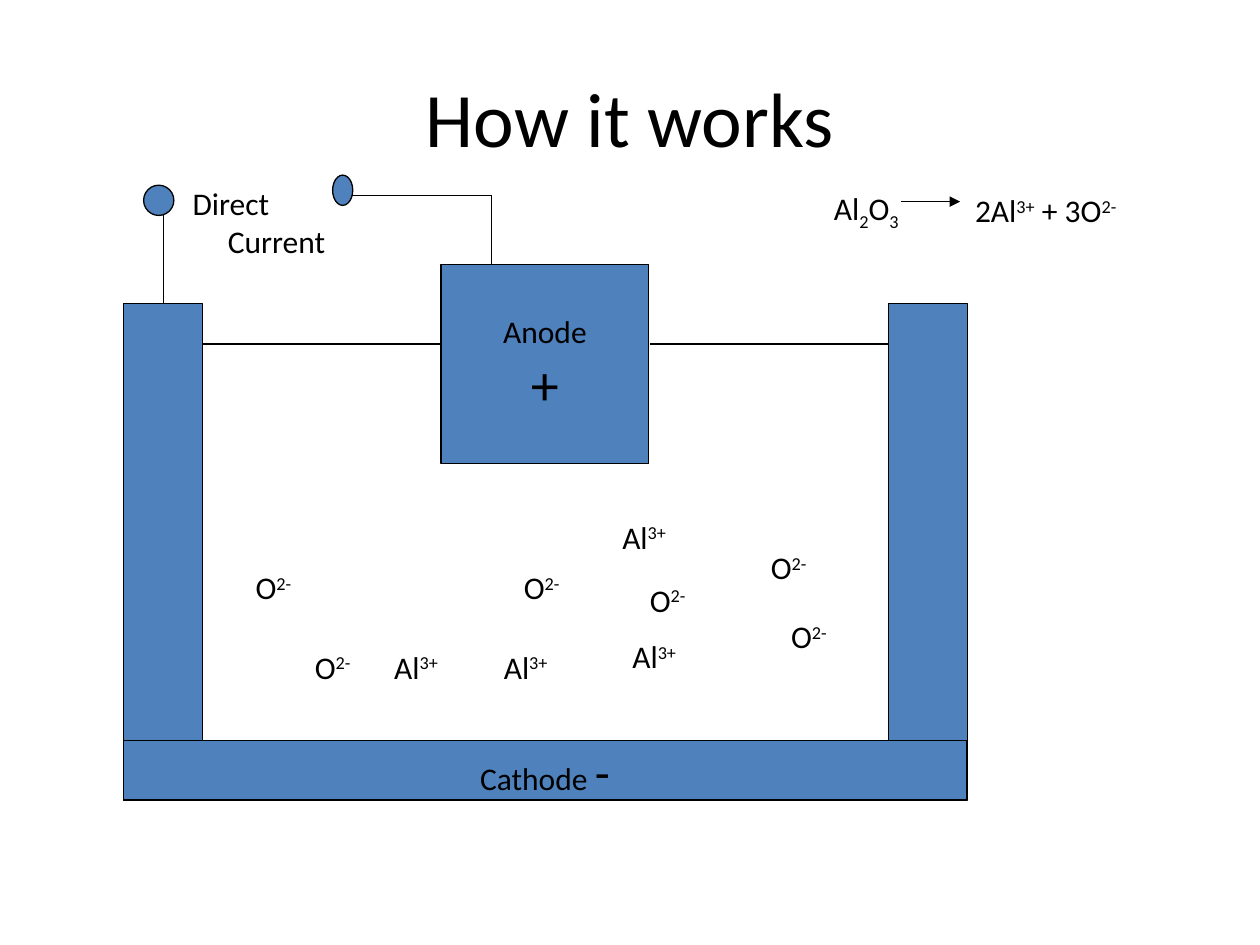
"""Build a slide that shows how an electrolysis cell splits aluminium oxide."""
from dataclasses import dataclass
from typing import Optional

import pptx
import pptx.dml.color
import pptx.enum.shapes
import pptx.enum.text
import pptx.oxml.ns
import pptx.util
from lxml import etree

Inches = pptx.util.Inches
Kind = pptx.enum.shapes.MSO_SHAPE
Align = pptx.enum.text.PP_ALIGN
Anchor = pptx.enum.text.MSO_ANCHOR
Fit = pptx.enum.text.MSO_AUTO_SIZE


@dataclass(frozen=True)
class Theme:
    font: str = "Calibri"
    ink: str = "000000"
    fill: str = "4F81BD"
    line: float = 0.75
    title: int = 44
    plus: int = 32
    minus: int = 28
    body: int = 18


THEME = Theme()


@dataclass(frozen=True)
class Run:
    text: str
    size: int = THEME.body
    base: int = 0


@dataclass(frozen=True)
class Para:
    runs: tuple[Run, ...]
    indent: float = 0


@dataclass(frozen=True)
class Box:
    left: float
    top: float
    width: float
    height: float


@dataclass(frozen=True)
class Part:
    box: Box
    kind: Kind = Kind.RECTANGLE
    paras: tuple[Para, ...] = ()


@dataclass(frozen=True)
class Wire:
    start: tuple[float, float]
    end: tuple[float, float]
    arrow: bool = False


@dataclass(frozen=True)
class Label:
    box: Box
    paras: tuple[Para, ...]
    wrap: bool = False


def sup(text: str) -> Run:
    """Return a raised run."""
    return Run(text, base=30000)


def sub(text: str) -> Run:
    """Return a lowered run."""
    return Run(text, base=-25000)


def color(code: str) -> pptx.dml.color.RGBColor:
    """Turn a hex code into a colour."""
    return pptx.dml.color.RGBColor.from_string(code)


def place(box: Box) -> tuple[int, ...]:
    """Turn a box into lengths."""
    return tuple(Inches(n) for n in (box.left, box.top, box.width, box.height))


def write(frame, paras: tuple[Para, ...], align: Align) -> None:
    """Fill a text frame run by run."""
    for i, para in enumerate(paras):
        line = frame.paragraphs[0] if i == 0 else frame.add_paragraph()
        line.alignment = align
        if para.indent:
            line._p.get_or_add_pPr().set("marL", str(Inches(para.indent)))
        for item in para.runs:
            run = line.add_run()
            run.text = item.text
            run.font.name = THEME.font
            run.font.size = pptx.util.Pt(item.size)
            run.font.color.rgb = color(THEME.ink)
            if item.base:
                run._r.get_or_add_rPr().set("baseline", str(item.base))


def stroke(line) -> None:
    """Give a line the theme's ink and weight."""
    line.color.rgb = color(THEME.ink)
    line.width = pptx.util.Pt(THEME.line)


def draw_part(slide, part: Part) -> None:
    """Draw a filled part of the cell."""
    shape = slide.shapes.add_shape(part.kind, *place(part.box))
    shape.shadow.inherit = False
    shape.fill.solid()
    shape.fill.fore_color.rgb = color(THEME.fill)
    stroke(shape.line)
    frame = shape.text_frame
    frame.word_wrap = False
    frame.vertical_anchor = Anchor.MIDDLE
    write(frame, part.paras, Align.CENTER)


def draw_wire(slide, wire: Wire) -> None:
    """Draw a straight line, with an arrowhead if asked."""
    ends = (Inches(n) for n in wire.start + wire.end)
    link = slide.shapes.add_connector(
        pptx.enum.shapes.MSO_CONNECTOR.STRAIGHT, *ends)
    stroke(link.line)
    qn = pptx.oxml.ns.qn
    if wire.arrow:
        etree.SubElement(link.line._get_or_add_ln(), qn("a:tailEnd"), type="triangle")
    etree.SubElement(link._element.spPr, qn("a:effectLst"))


def draw_label(slide, label: Label) -> None:
    """Draw a left-aligned text label."""
    frame = slide.shapes.add_textbox(*place(label.box)).text_frame
    frame.word_wrap = label.wrap
    frame.auto_size = Fit.SHAPE_TO_FIT_TEXT
    write(frame, label.paras, Align.LEFT)


def draw_title(slide, text: str) -> None:
    """Draw the centred title."""
    frame = slide.shapes.add_textbox(*place(Box(0.5, 0.3, 9, 1.25))).text_frame
    frame.word_wrap = True
    frame.vertical_anchor = Anchor.MIDDLE
    write(frame, (Para((Run(text, THEME.title),)),), Align.CENTER)


ANODE = (Para((Run("Anode"),)), Para((Run("+", THEME.plus),)))
CATHODE = (Para((Run("Cathode "), Run("-", THEME.minus))),)
PARTS = (
    Part(Box(3.5, 2.1, 1.65, 1.58), paras=ANODE),
    Part(Box(7.05, 2.41, 0.63, 3.94)),
    Part(Box(0.98, 2.41, 0.63, 3.94)),
    Part(Box(0.98, 5.88, 6.69, 0.47), paras=CATHODE),
)
ENDS = (
    Part(Box(1.14, 1.47, 0.24, 0.24), Kind.OVAL),
    Part(Box(2.64, 1.39, 0.16, 0.24), Kind.OVAL),
)
WIRES = (
    Wire((3.9, 2.1), (3.9, 1.55)),
    Wire((3.9, 1.55), (2.72, 1.55)),
    Wire((1.3, 2.41), (1.3, 1.55)),
    Wire((1.61, 2.73), (3.5, 2.73)),
    Wire((5.16, 2.73), (7.05, 2.73)),
    Wire((7.15, 1.6), (7.62, 1.6), arrow=True),
)
OXIDE = (Para((Run("Al"), sub("2"), Run("O"), sub("3"))),)
SPLIT = (Para((Run("2Al"), sup("3+"), Run(" + 3O"), sup("2-"))),)
POWER = (Para((Run("Direct"),)), Para((Run("Current"),), indent=0.28))
LABELS = (
    Label(Box(6.52, 1.45, 0.8, 0.4), OXIDE),
    Label(Box(7.64, 1.47, 1.37, 0.4), SPLIT),
    Label(Box(1.43, 1.41, 1.38, 0.7), POWER, wrap=True),
)
METAL = ((3.03, 5.09), (3.9, 5.09), (4.84, 4.06), (4.92, 5.01))
OXYGEN = ((5.06, 4.56), (2.4, 5.09), (6.18, 4.85),
          (4.06, 4.46), (6.02, 4.3), (1.93, 4.46))
IONS = (("Al", "3+", 0.61, METAL), ("O", "2-", 0.54, OXYGEN))


def main() -> None:
    """Build and save the slide."""
    deck = pptx.Presentation()
    deck.slide_width, deck.slide_height = Inches(10), Inches(7.5)
    slide = deck.slides.add_slide(deck.slide_layouts[6])
    draw_title(slide, "How it works")
    for part in PARTS:
        draw_part(slide, part)
    for wire in WIRES:
        draw_wire(slide, wire)
    for part in ENDS:
        draw_part(slide, part)
    for name, charge, width, spots in IONS:
        for left, top in spots:
            paras = (Para((Run(name), sup(charge))),)
            draw_label(slide, Label(Box(left, top, width, 0.4), paras))
    for label in LABELS:
        draw_label(slide, label)
    deck.save("out.pptx")


if __name__ == "__main__":
    main()
